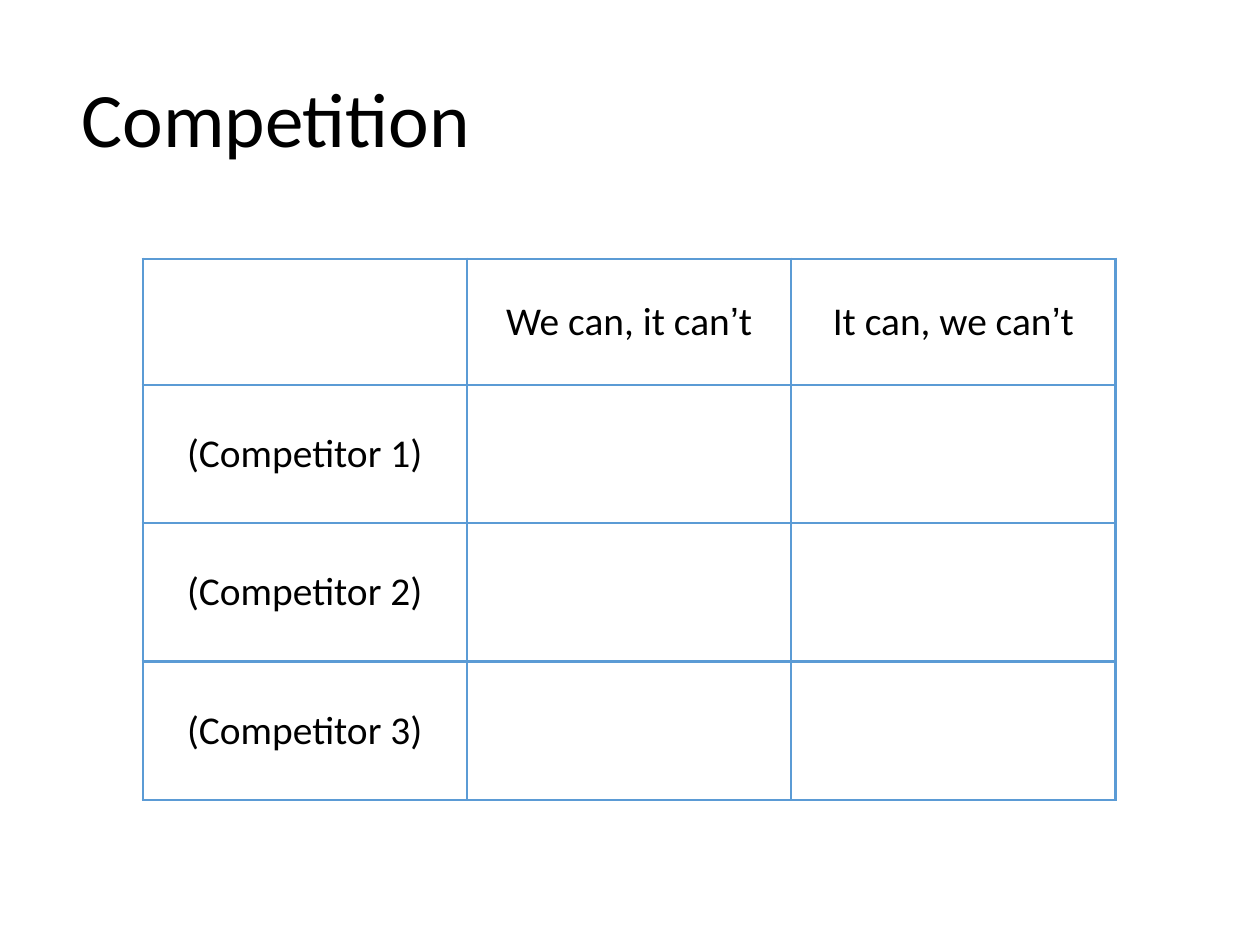
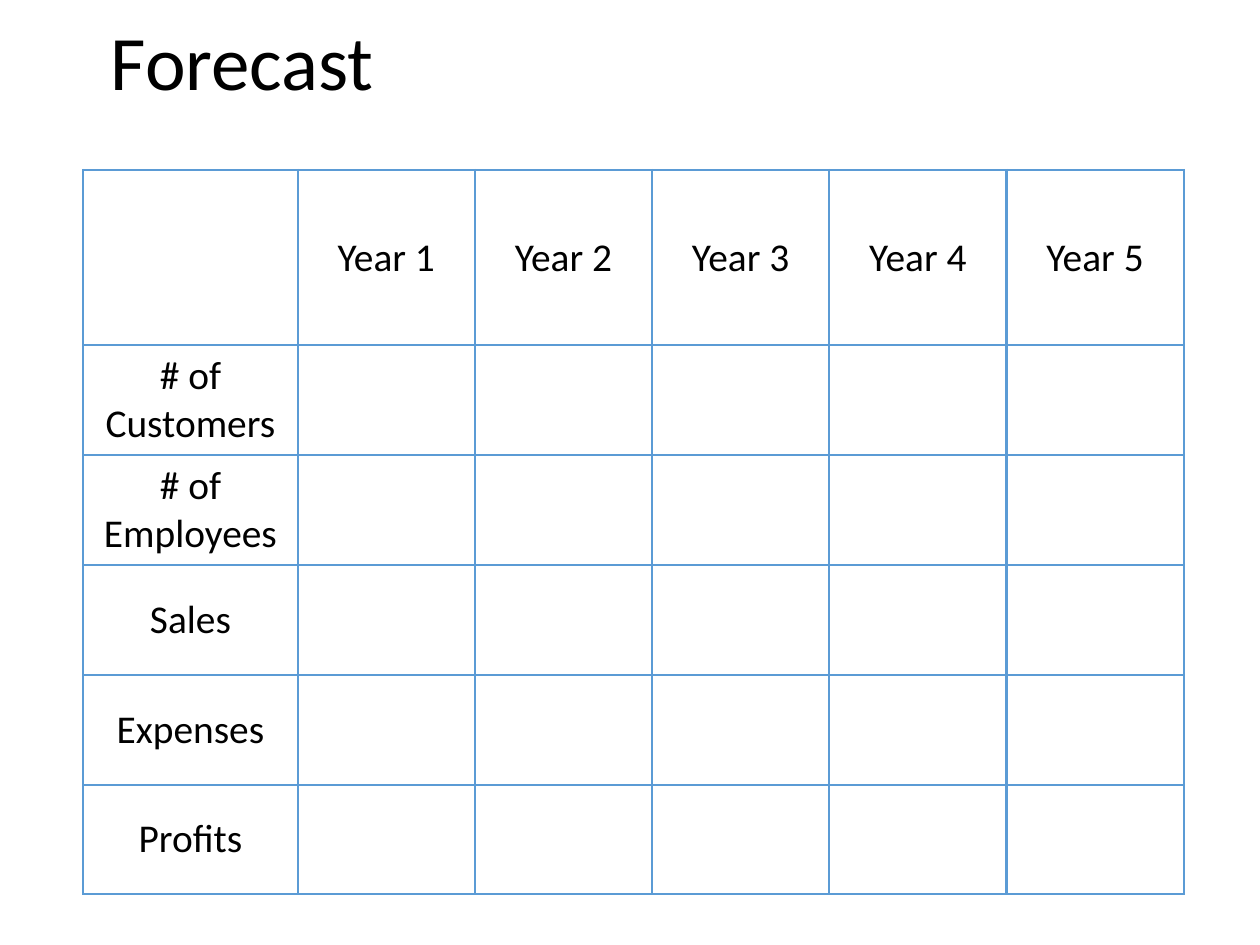
from dataclasses import dataclass
from enum import Enum
from itertools import product

from lxml.etree import SubElement
from pptx import Presentation
from pptx.dml.color import RGBColor
from pptx.enum.text import MSO_ANCHOR, PP_ALIGN
from pptx.oxml.ns import qn
from pptx.util import Pt

EMU_PER_PX = 9144
PAGE_WIDTH, PAGE_HEIGHT = 1422, 1067


class Theme(Enum):
    TEXT = "000000"
    BORDER = "5B9BD5"
    FONT = "Calibri"
    APOSTROPHE_FONT = "Arial"
    TITLE_SIZE = 62.6
    CELL_SIZE = 32
    BORDER_WIDTH = 2


@dataclass
class Box:
    left: int
    top: int
    width: int
    height: int

    def emu(self):
        return [px(side) for side in (self.left, self.top, self.width, self.height)]


def px(length):
    return length * EMU_PER_PX


def split_rest(total, first, count):
    return [first] + [(total - first) // count] * count


def add_run(para, text, size, font=Theme.FONT):
    span = para.add_run()
    span.text = text
    span.font.size = Pt(size.value)
    span.font.name = font.value
    span.font.color.rgb = RGBColor.from_string(Theme.TEXT.value)


def add_title(page, box, text):
    frame = page.shapes.add_textbox(*box.emu()).text_frame
    frame.word_wrap = True
    frame.vertical_anchor = MSO_ANCHOR.MIDDLE
    frame.margin_left = frame.margin_right = px(6)
    para = frame.paragraphs[0]
    para.line_spacing = 0.9
    add_run(para, text, Theme.TITLE_SIZE)


def outline_cell(cell):
    cell.fill.background()
    properties = cell._tc.get_or_add_tcPr()
    for position, side in enumerate(("a:lnL", "a:lnR", "a:lnT", "a:lnB")):
        line = SubElement(properties, qn(side), w=str(Pt(Theme.BORDER_WIDTH.value)))
        fill = SubElement(line, qn("a:solidFill"))
        SubElement(fill, qn("a:srgbClr"), val=Theme.BORDER.value)
        properties.insert(position, line)


def write_cell(cell, text):
    cell.vertical_anchor = MSO_ANCHOR.MIDDLE
    cell.margin_left = cell.margin_right = px(6)
    cell.margin_top = cell.margin_bottom = px(6)
    para = cell.text_frame.paragraphs[0]
    para.alignment = PP_ALIGN.CENTER
    for part in text.partition("’"):
        if part:
            font = Theme.APOSTROPHE_FONT if part == "’" else Theme.FONT
            add_run(para, part, Theme.CELL_SIZE, font)


def add_grid(page, box, headings, labels, first_column, first_row):
    columns = split_rest(box.width, first_column, len(headings))
    rows = split_rest(box.height, first_row, len(labels))
    table = page.shapes.add_table(len(rows), len(columns), *box.emu()).table
    table.first_row = table.horz_banding = False
    for column, width in zip(table.columns, columns):
        column.width = px(width)
    for row, height in zip(table.rows, rows):
        row.height = px(height)
    for row, column in product(range(len(rows)), range(len(columns))):
        outline_cell(table.cell(row, column))
    for column, heading in enumerate(headings, 1):
        write_cell(table.cell(0, column), heading)
    for row, label in enumerate(labels, 1):
        write_cell(table.cell(row, 0), label)


def add_competition(page):
    add_title(page, Box(86, 67, 1264, 142), "Competition")
    add_grid(
        page,
        Box(161, 292, 1098, 611),
        ["We can, it can’t", "It can, we can’t"],
        [f"(Competitor {number})" for number in range(1, 4)],
        first_column=366,
        first_row=143,
    )


def add_forecast(page):
    add_title(page, Box(119, 0, 1144, 147), "Forecast")
    add_grid(
        page,
        Box(94, 192, 1242, 818),
        [f"Year {number}" for number in range(1, 6)],
        ["# of Customers", "# of Employees", "Sales", "Expenses", "Profits"],
        first_column=242,
        first_row=198,
    )


def main():
    deck = Presentation()
    deck.slide_width, deck.slide_height = px(PAGE_WIDTH), px(PAGE_HEIGHT)
    for build in (add_competition, add_forecast):
        build(deck.slides.add_slide(deck.slide_layouts[6]))
    deck.save("out.pptx")


if __name__ == "__main__":
    main()
